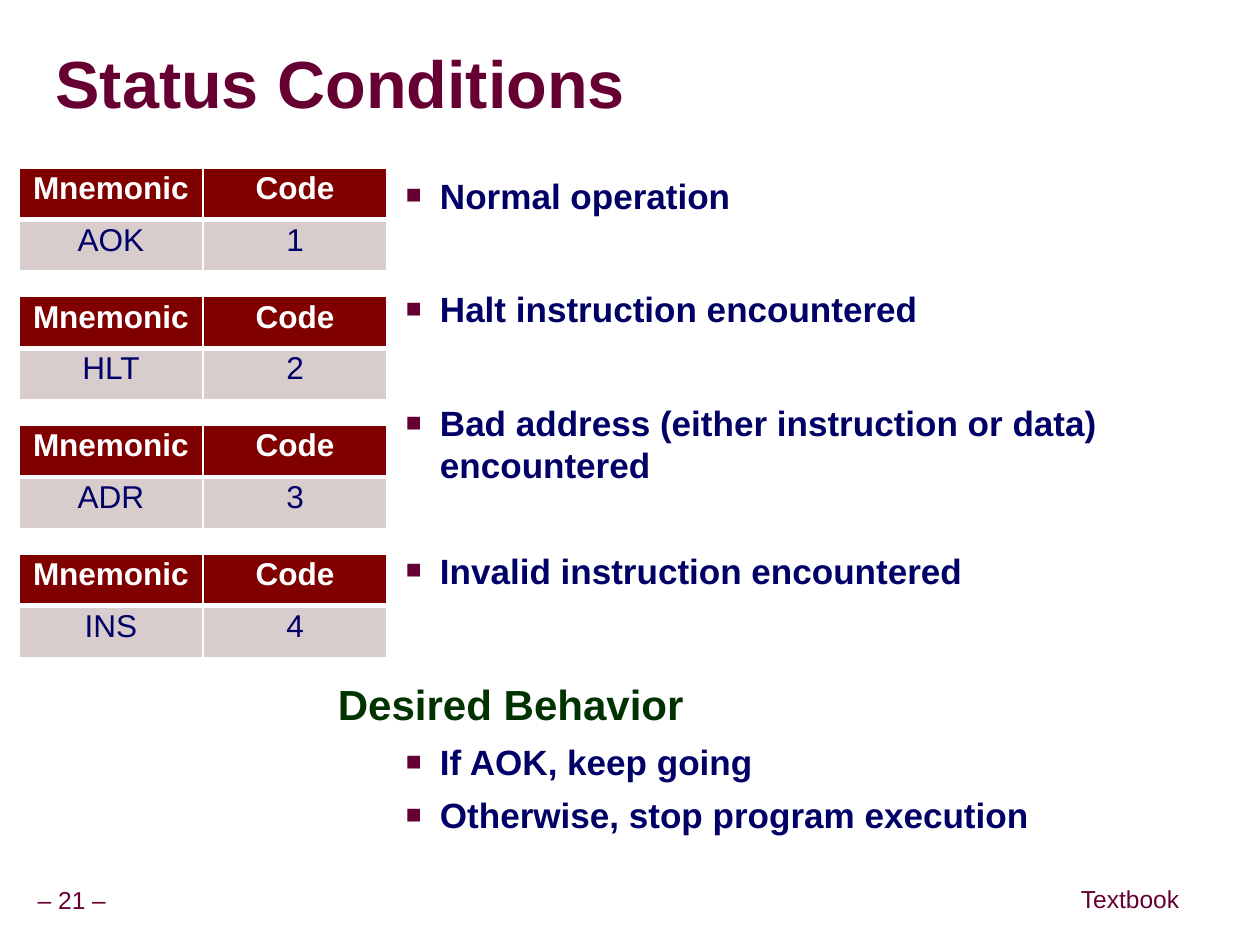
import dataclasses
import pptx
import pptx.dml.color
import pptx.enum.text
import pptx.oxml
import pptx.oxml.ns
import pptx.util

Inches = pptx.util.Inches
Pt = pptx.util.Pt
RGBColor = pptx.dml.color.RGBColor
Align = pptx.enum.text.PP_ALIGN
Anchor = pptx.enum.text.MSO_ANCHOR

WHITE = RGBColor(0xFF, 0xFF, 0xFF)
WINE = RGBColor(0x66, 0x00, 0x33)
MAROON = RGBColor(0x80, 0x00, 0x00)
NAVY = RGBColor(0x00, 0x00, 0x66)
GREEN = RGBColor(0x00, 0x33, 0x00)
PALE = RGBColor(0xD8, 0xCC, 0xCC)
SPACE = pptx.oxml.ns.nsdecls("a")


@dataclasses.dataclass
class Status:
    name: str
    code: str


@dataclasses.dataclass
class Line:
    text: str
    gap: float
    head: bool = False


@dataclasses.dataclass
class Footer:
    text: str
    left: float
    top: float
    width: float


STATES = [Status("AOK", "1"), Status("HLT", "2"),
          Status("ADR", "3"), Status("INS", "4")]
LINES = [
    Line("Normal operation", 2.5),
    Line("Halt instruction encountered", 41),
    Line("Bad address (either instruction or data) encountered", 41),
    Line("Invalid instruction encountered", 36),
    Line("Desired Behavior", 52, True),
    Line("If AOK, keep going", 6),
    Line("Otherwise, stop program execution", 6),
]
FOOTERS = [Footer("– 21 –", 0.24, 6.99, 0.66),
           Footer("Textbook", 8.44, 6.98, 1.04)]


def style(par, size: float, color: RGBColor, bold: bool = False) -> None:
    for run in par.runs:
        run.font.name = "Arial"
        run.font.size = Pt(size)
        run.font.bold = bold
        run.font.color.rgb = color


def inset(frame, side: float, top: float) -> None:
    frame.margin_left = frame.margin_right = Inches(side)
    frame.margin_top = frame.margin_bottom = Inches(top)


def add_title(slide, text: str) -> None:
    title = slide.shapes.title
    title.left, title.top = Inches(0.44), Inches(0.27)
    title.width, title.height = Inches(9.52), Inches(0.85)
    frame = title.text_frame
    frame.text = text
    inset(frame, 0, 0)
    frame.vertical_anchor = Anchor.MIDDLE
    par = frame.paragraphs[0]
    par.alignment = Align.LEFT
    par.line_spacing = 0.87
    style(par, 38, WINE, True)
    shade = pptx.oxml.parse_xml(
        f'<a:effectLst {SPACE}><a:outerShdw dist="53882" dir="2700000">'
        '<a:srgbClr val="969696"/></a:outerShdw></a:effectLst>')
    par.runs[0].font.fill._xPr.insert(1, shade)


def edge(cell, side: str, width: float) -> None:
    cell._tc.get_or_add_tcPr().append(pptx.oxml.parse_xml(
        f'<a:ln{side} {SPACE} w="{Pt(width)}"><a:solidFill>'
        f'<a:srgbClr val="{WHITE}"/></a:solidFill></a:ln{side}>'))


def add_state(slide, state: Status, top: float) -> None:
    table = slide.shapes.add_table(
        2, 2, Inches(0.15), Inches(top), Inches(2.92), Inches(0.82)).table
    rows = [("Mnemonic", "Code"), (state.name, state.code)]
    for r, texts in enumerate(rows):
        table.rows[r].height = Inches(0.41)
        head = r == 0
        for c, text in enumerate(texts):
            cell = table.cell(r, c)
            cell.text = text
            par = cell.text_frame.paragraphs[0]
            par.alignment = Align.CENTER
            par.line_spacing = 0.9
            style(par, 18, WHITE if head else NAVY, head)
            for side in "LRTB":
                thick = side == ("B" if head else "T")
                edge(cell, side, 3 if thick else 1)
            cell.fill.solid()
            cell.fill.fore_color.rgb = MAROON if head else PALE


def add_list(slide, lines: list[Line]) -> None:
    box = slide.shapes.add_textbox(
        Inches(2.58), Inches(1.33), Inches(6.81), Inches(5.7))
    frame = box.text_frame
    frame.word_wrap = True
    inset(frame, 0.1, 0.05)
    for i, line in enumerate(lines):
        par = frame.add_paragraph() if i else frame.paragraphs[0]
        par.text = line.text
        par.space_before = Pt(line.gap)
        if line.head:
            par.line_spacing = 0.95
            style(par, 24, GREEN, True)
            continue
        style(par, 20, NAVY, True)
        props = par._p.get_or_add_pPr()
        props.set("marL", str(Inches(0.81)))
        props.set("indent", str(Inches(-0.27)))
        for xml in (f'<a:buClr {SPACE}><a:srgbClr val="{WINE}"/></a:buClr>',
                    f'<a:buSzPct {SPACE} val="75000"/>',
                    f'<a:buFont {SPACE} typeface="Arial"/>',
                    f'<a:buChar {SPACE} char="■"/>'):
            props.append(pptx.oxml.parse_xml(xml))


def add_footer(slide, foot: Footer) -> None:
    box = slide.shapes.add_textbox(
        Inches(foot.left), Inches(foot.top), Inches(foot.width), Inches(0.31))
    frame = box.text_frame
    frame.text = foot.text
    frame.word_wrap = False
    frame.vertical_anchor = Anchor.MIDDLE
    inset(frame, 0.05, 0.05)
    par = frame.paragraphs[0]
    par.alignment = Align.CENTER
    par.line_spacing = 0.9
    style(par, 14, WINE)


def main() -> None:
    deck = pptx.Presentation()
    deck.slide_width, deck.slide_height = Inches(9.99), Inches(7.49)
    slide = deck.slides.add_slide(deck.slide_layouts[5])
    add_title(slide, "Status Conditions")
    for i, state in enumerate(STATES):
        add_state(slide, state, 1.33 + 1.02 * i)
    add_list(slide, LINES)
    for foot in FOOTERS:
        add_footer(slide, foot)
    deck.save("out.pptx")


if __name__ == "__main__":
    main()
